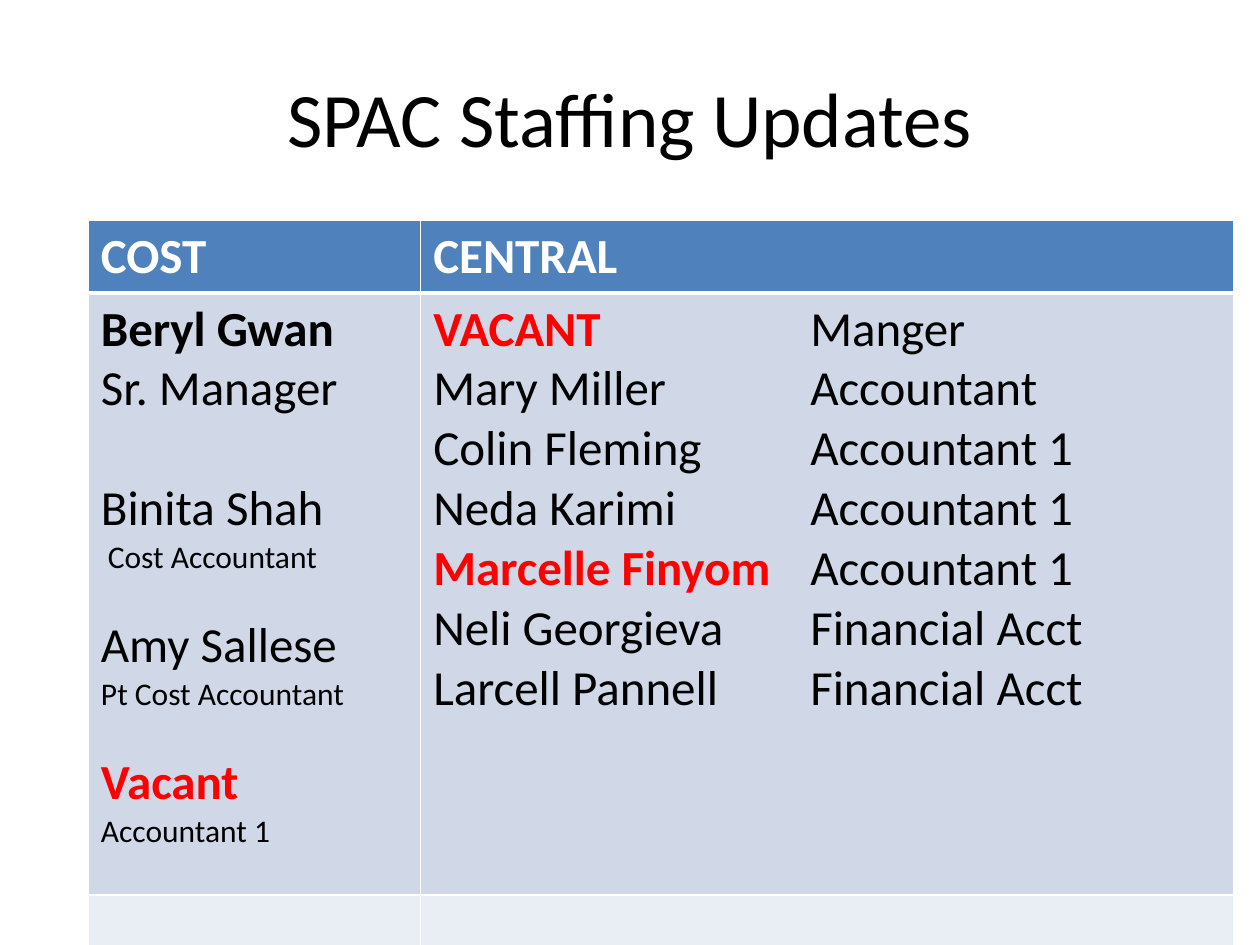
from lxml.etree import SubElement
from pptx import Presentation
from pptx.dml.color import RGBColor
from pptx.enum.text import MSO_ANCHOR, PP_ALIGN
from pptx.oxml import parse_xml
from pptx.oxml.ns import nsdecls, qn
from pptx.util import Cm, Pt

COLORS = {
    "text": "000000",
    "white": "FFFFFF",
    "vacant": "FF0000",
    "header": "4F81BD",
    "body": "D0D8E8",
    "footer": "E9EDF4",
}

COST_STAFF = [
    ("Beryl Gwan", 28, "text", True, 0, 0),
    ("Sr. Manager", 28, "text", False, 0, 0),
    ("Binita Shah", 28, "text", False, 34.2, 0),
    ("Cost Accountant", 18, "text", False, 0, 0.14),
    ("Amy Sallese", 28, "text", False, 22, 0),
    ("Pt Cost Accountant", 18, "text", False, 0, 0),
    ("Vacant", 28, "vacant", True, 22, 0),
    ("Accountant 1", 18, "text", False, 0, 0),
]

CENTRAL_STAFF = [
    ("VACANT", "Manger", True),
    ("Mary Miller", "Accountant", False),
    ("Colin Fleming", "Accountant 1", False),
    ("Neda Karimi", "Accountant 1", False),
    ("Marcelle Finyom", "Accountant 1", True),
    ("Neli Georgieva", "Financial Acct", False),
    ("Larcell Pannell", "Financial Acct", False),
]


class SlideBuilder:
    font_name = "Calibri"
    role_tab = Cm(7.6)

    def __init__(self, page):
        self.page = page

    def style(self, font, size, color, bold=False):
        font.name = self.font_name
        font.size = Pt(size)
        font.bold = bold
        font.color.rgb = RGBColor.from_string(COLORS[color])

    def title(self, text, left, top, width, height):
        box = self.page.shapes.add_textbox(Cm(left), Cm(top), Cm(width), Cm(height))
        frame = box.text_frame
        frame.word_wrap = True
        frame.vertical_anchor = MSO_ANCHOR.MIDDLE
        para = frame.paragraphs[0]
        para.text = text
        para.alignment = PP_ALIGN.CENTER
        self.style(para.font, 44, "text")

    def table(self, left, top, widths, heights, fills):
        table = self.page.shapes.add_table(
            len(heights), len(widths), Cm(left), Cm(top), Cm(sum(widths)), Cm(sum(heights))
        ).table
        table.first_row = table.horz_banding = False
        for column, width in zip(table.columns, widths):
            column.width = Cm(width)
        for index, (row, height, fill) in enumerate(zip(table.rows, heights, fills)):
            row.height = Cm(height)
            for cell in row.cells:
                cell.fill.solid()
                cell.fill.fore_color.rgb = RGBColor.from_string(COLORS[fill])
                self.borders(cell, 3 if index == 1 else 1, 3 if index == 0 else 1)
        return table

    def borders(self, cell, top, bottom):
        properties = cell._tc.get_or_add_tcPr()
        sides = {"lnL": 1, "lnR": 1, "lnT": top, "lnB": bottom}
        for index, (side, width) in enumerate(sides.items()):
            line = parse_xml(
                f'<a:{side} {nsdecls("a")} w="{Pt(width)}"><a:solidFill>'
                f'<a:srgbClr val="{COLORS["white"]}"/></a:solidFill></a:{side}>'
            )
            properties.insert(index, line)

    def paragraphs(self, cell, count):
        frame = cell.text_frame
        for _ in range(count - 1):
            frame.add_paragraph()
        return frame.paragraphs

    def lines(self, cell, lines):
        for para, line in zip(self.paragraphs(cell, len(lines)), lines):
            text, size, color, bold, space, indent = line
            para.text = text
            if space:
                para.space_before = Pt(space)
            if indent:
                para._p.get_or_add_pPr().set("marL", str(Cm(indent)))
            self.style(para.font, size, color, bold)

    def roster(self, cell, staff):
        for para, (name, role, highlighted) in zip(self.paragraphs(cell, len(staff)), staff):
            tabs = SubElement(para._p.get_or_add_pPr(), qn("a:tabLst"))
            SubElement(tabs, qn("a:tab"), pos=str(self.role_tab), algn="l")
            if highlighted:
                for text, color, bold in ((name + "\t", "vacant", True), (role, "text", False)):
                    span = para.add_run()
                    span.text = text
                    self.style(span.font, 28, color, bold)
            else:
                para.text = f"{name}\t{role}"
                self.style(para.font, 28, "text")


def main():
    deck = Presentation()
    deck.slide_width, deck.slide_height = Cm(25.4), Cm(19.05)
    builder = SlideBuilder(deck.slides.add_slide(deck.slide_layouts[6]))
    builder.title("SPAC Staffing Updates", 1.27, 0.76, 22.86, 3.18)
    table = builder.table(
        1.78, 4.45, [6.7, 16.39], [1.46, 12.13, 1.02], ["header", "body", "footer"]
    )
    for column, heading in enumerate(("COST", "CENTRAL")):
        builder.lines(table.cell(0, column), [(heading, 28, "white", True, 0, 0)])
    builder.lines(table.cell(1, 0), COST_STAFF)
    builder.roster(table.cell(1, 1), CENTRAL_STAFF)
    deck.save("out.pptx")


if __name__ == "__main__":
    main()
